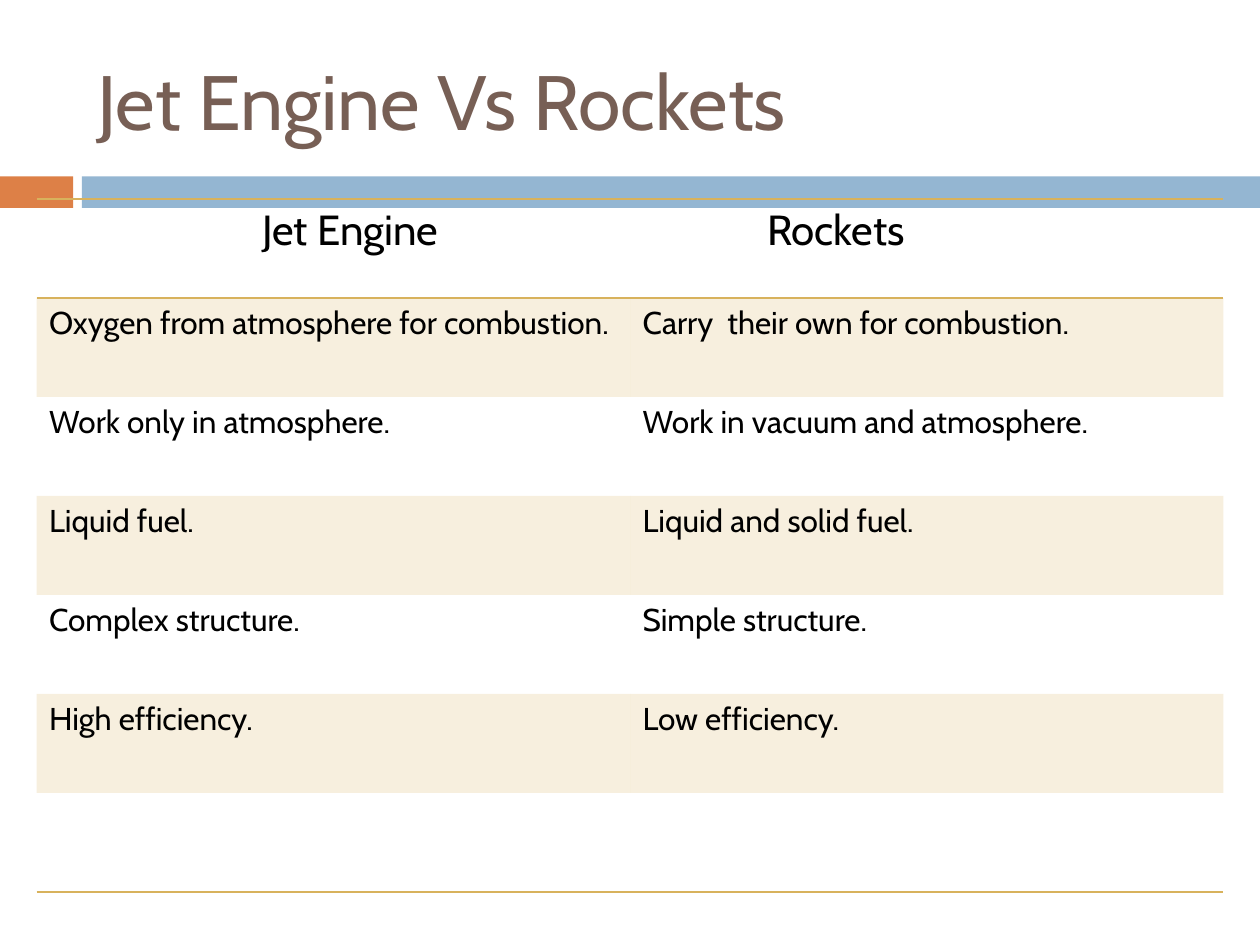
"""Build a slide that compares jet engines with rockets in a table."""
from dataclasses import dataclass

from lxml.etree import SubElement
from pptx import Presentation
from pptx.dml.color import RGBColor
from pptx.enum.shapes import MSO_SHAPE
from pptx.enum.text import MSO_ANCHOR, PP_ALIGN
from pptx.oxml.ns import qn
from pptx.util import Inches, Pt

WIDTH, HEIGHT = Inches(10), Inches(7.5)
FONT = "Cabin"
BLACK = RGBColor(0x00, 0x00, 0x00)
BROWN = RGBColor(0x77, 0x5F, 0x55)
ORANGE = RGBColor(0xDD, 0x80, 0x47)
BLUE = RGBColor(0x94, 0xB6, 0xD2)
GOLD = RGBColor(0xD8, 0xB2, 0x5C)
BAND_OPACITY = 20
PLAIN_TABLE_STYLE = "{2D5ABB26-0587-4C30-8999-92F81FD0307C}"


@dataclass(frozen=True)
class Bar:
    """A horizontal bar, placed by shares of the slide width."""
    left: float
    width: float
    color: RGBColor


@dataclass(frozen=True)
class Row:
    """A table row with its look."""
    texts: tuple[str, str]
    size: int = 18
    indents: tuple[float, float] = (0.1, 0.1)
    banded: bool = False
    borders: tuple[str, ...] = ()


BARS = (Bar(0, 0.058, ORANGE), Bar(0.065, 0.935, BLUE))
FACTS = (
    ("Oxygen from atmosphere for combustion.", "Carry  their own for combustion."),
    ("Work only in atmosphere.", "Work in vacuum and atmosphere."),
    ("Liquid fuel.", "Liquid and solid fuel."),
    ("Complex structure.", "Simple structure."),
    ("High efficiency.", "Low efficiency."),
)
ROWS = (
    Row(("Jet Engine", "Rockets"), 24, (1.79, 1.09), borders=("a:lnT", "a:lnB")),
    *(Row(texts, banded=index % 2 == 0) for index, texts in enumerate(FACTS)),
    Row(("", ""), borders=("a:lnB",)),
)


def style_text(frame, size: int, color: RGBColor) -> None:
    """Format every run of a text frame."""
    for para in frame.paragraphs:
        para.alignment = PP_ALIGN.LEFT
        para.font.size = Pt(size)
        for span in para.runs:
            span.font.name = FONT
            span.font.size = Pt(size)
            span.font.color.rgb = color


def draw_title(slide, text: str) -> None:
    """Place and format the title placeholder."""
    title = slide.shapes.title
    title.left, title.top = int(WIDTH * 0.067), Inches(0.25)
    title.width, title.height = int(WIDTH * 0.892), Inches(1.08)
    title.text_frame.text = text
    title.text_frame.vertical_anchor = MSO_ANCHOR.MIDDLE
    style_text(title.text_frame, 44, BROWN)


def draw_bar(slide, bar: Bar) -> None:
    """Draw one bar below the title."""
    box = slide.shapes.add_shape(
        MSO_SHAPE.RECTANGLE, int(WIDTH * bar.left), Inches(1.4),
        int(WIDTH * bar.width), Inches(0.25))
    box.shadow.inherit = False
    box.fill.solid()
    box.fill.fore_color.rgb = bar.color
    box.line.fill.background()


def add_border(cell, side: str) -> None:
    """Add a thin gold line to one side of a cell."""
    line = SubElement(cell._tc.get_or_add_tcPr(), qn(side), w=str(Pt(1)))
    fill = SubElement(line, qn("a:solidFill"))
    SubElement(fill, qn("a:srgbClr"), val=str(GOLD))


def fill_cell(cell, banded: bool) -> None:
    """Give a cell a pale gold fill, or none."""
    if not banded:
        cell.fill.background()
        return
    cell.fill.solid()
    cell.fill.fore_color.rgb = GOLD
    color = cell._tc.tcPr.find(f"{qn('a:solidFill')}/{qn('a:srgbClr')}")
    SubElement(color, qn("a:alpha"), val=str(BAND_OPACITY * 1000))


def draw_table(slide, rows: tuple[Row, ...]) -> None:
    """Draw the comparison table with equal rows and columns."""
    frame = slide.shapes.add_table(
        len(rows), 2, Inches(0.29), Inches(1.58), Inches(9.42), Inches(5.5))
    table = frame.table
    table.first_row = table.horz_banding = False
    table._tbl.tblPr.find(qn("a:tableStyleId")).text = PLAIN_TABLE_STYLE
    for index, row in enumerate(rows):
        for column, text in enumerate(row.texts):
            cell = table.cell(index, column)
            cell.text_frame.text = text
            cell.margin_left = Inches(row.indents[column])
            style_text(cell.text_frame, row.size, BLACK)
            for side in row.borders:
                add_border(cell, side)
            fill_cell(cell, row.banded)


def main() -> None:
    """Build and save the deck."""
    deck = Presentation()
    deck.slide_width, deck.slide_height = WIDTH, HEIGHT
    page = deck.slides.add_slide(deck.slide_layouts.get_by_name("Title Only"))
    for bar in BARS:
        draw_bar(page, bar)
    draw_title(page, "Jet Engine Vs Rockets")
    draw_table(page, ROWS)
    deck.save("out.pptx")


if __name__ == "__main__":
    main()
